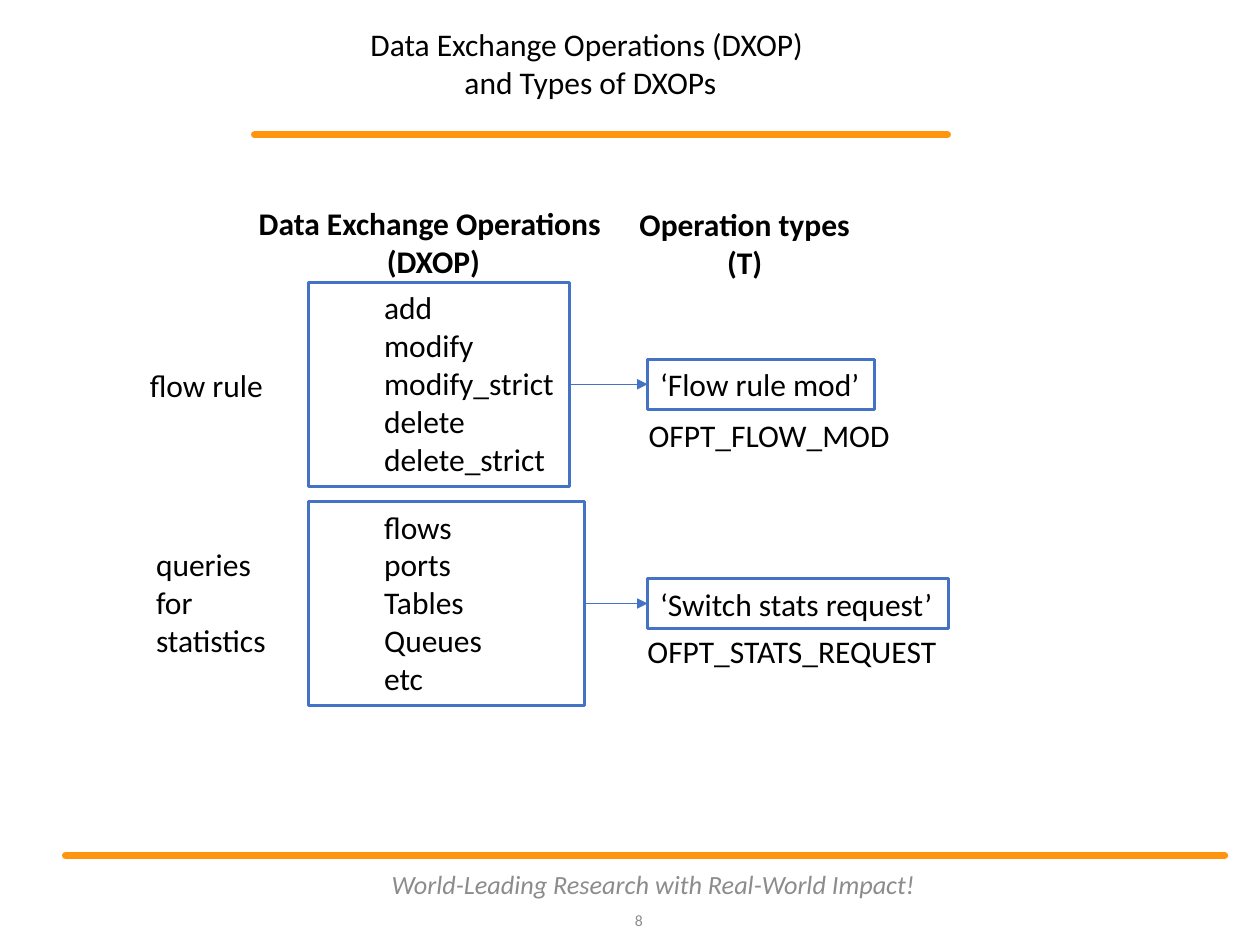
from lxml.etree import SubElement
from pptx import Presentation
from pptx.dml.color import RGBColor
from pptx.enum.shapes import MSO_CONNECTOR as Conn, MSO_SHAPE as Kind
from pptx.enum.text import MSO_ANCHOR as Anchor, MSO_AUTO_SIZE as Auto, PP_ALIGN as Align
from pptx.oxml.ns import qn
from pptx.util import Inches, Pt

BLUE, ORANGE, GRAY = "4472C4", "FF950E", "8C8C8C"

# Content: text, position and size
TITLE = "Data Exchange Operations (DXOP) \vand Types of DXOPs"
RULES = [(2.02, 1.07, 7.52), (0.52, 6.79, 9.72)]
HEADS = [
    (["Data Exchange Operations ", "(DXOP)"], (1.94, 1.57, 3, 0.71)),
    (["Operation types", "(T)"], (4.97, 1.58, 1.88, 0.71)),
]
ROWS = [
    dict(label=["flow rule"], place=(1.09, 2.86, 1.11, 0.4),
         ops=["add", "modify", "modify_strict", "delete", "delete_strict"],
         top=2.24, wide=2.07, kind="‘Flow rule mod’", span=1.8,
         code="OFPT_FLOW_MOD", spot=(5.05, 3.25, 2.13, 0.4)),
    dict(label=["queries", "for", "statistics"], place=(1.14, 4.28, 1.16, 1.01),
         ops=["flows", "ports", "Tables", "Queues", "etc"],
         top=3.98, wide=2.19, kind="‘Switch stats request’", span=2.39,
         code="OFPT_STATS_REQUEST", spot=(5.04, 4.97, 2.51, 0.4)),
]
OPS_X, OPS_H, KIND_X, KIND_H = 2.45, 1.62, 5.14, 0.4

deck = Presentation()
deck.slide_width, deck.slide_height = Inches(10), Inches(7.5)
slide = deck.slides.add_slide(deck.slide_layouts[5])


def rgb(code):
    return RGBColor.from_string(code)


def write(shape, lines, size=18, color="000000", bold=False, italic=False,
          align=Align.LEFT, anchor=Anchor.TOP, indent=0, wrap=True):
    frame = shape.text_frame
    frame.word_wrap, frame.auto_size = wrap, Auto.NONE
    frame.vertical_anchor = anchor
    frame.text = "\n".join(lines)
    for para in frame.paragraphs:
        para.alignment = align
        if indent:
            para._p.get_or_add_pPr().set("marL", str(Inches(indent)))
        font = para.font
        for run in para.runs:
            font = run.font
            font.name, font.size = "Calibri", Pt(size)
            font.bold, font.italic = bold, italic
            font.color.rgb = rgb(color)


def label(lines, place, **form):
    write(slide.shapes.add_textbox(*map(Inches, place)), lines, **form)


def box(lines, place, fill=None, **form):
    shape = slide.shapes.add_shape(Kind.RECTANGLE, *map(Inches, place))
    shape.shadow.inherit = False
    if fill:
        shape.fill.solid()
        shape.fill.fore_color.rgb = rgb(fill)
    else:
        shape.fill.background()
    shape.line.color.rgb, shape.line.width = rgb(BLUE), Pt(1.75)
    write(shape, lines, **form)


def line(left, y, right, color, width, arrow=False):
    link = slide.shapes.add_connector(
        Conn.STRAIGHT, *map(Inches, (left, y, right, y)))
    link.line.color.rgb, link.line.width = rgb(color), Pt(width)
    stroke = link.line._get_or_add_ln()
    if arrow:
        SubElement(stroke, qn("a:tailEnd"), type="triangle")
    else:
        stroke.set("cap", "rnd")
    SubElement(link._element.spPr, qn("a:effectLst"))


# Frame of the slide: rules, title, footer
for left, y, right in RULES:
    line(left, y, right, ORANGE, 4)
title = slide.shapes.title
title.left, title.top, title.width, title.height = map(
    Inches, (1.99, 0.34, 5.39, 0.51))
write(title, [TITLE], align=Align.CENTER, anchor=Anchor.BOTTOM)
label(["8"], (4.8, 7.1, 0.4, 0.4), size=9, color=GRAY,
      align=Align.RIGHT, anchor=Anchor.MIDDLE)
label(["World-Leading Research with Real-World Impact!"],
      (3, 6.82, 4.37, 0.4), size=15, color=GRAY, italic=True,
      align=Align.CENTER, anchor=Anchor.MIDDLE)

# Column heads
for lines, place in HEADS:
    label(lines, place, bold=True, align=Align.CENTER, wrap=False)

# Rows: label, operations, arrow, type and its code
for row in ROWS:
    mid = row["top"] + OPS_H / 2
    label(row["label"], row["place"], wrap=len(row["label"]) > 1)
    box(row["ops"], (OPS_X, row["top"], row["wide"], OPS_H),
        fill="FFFFFF", indent=0.5)
    box([row["kind"]], (KIND_X, mid - KIND_H / 2, row["span"], KIND_H),
        wrap=False)
    line(OPS_X + row["wide"], mid, KIND_X, BLUE, 0.5, arrow=True)
    label([row["code"]], row["spot"], wrap=False)

deck.save("out.pptx")
